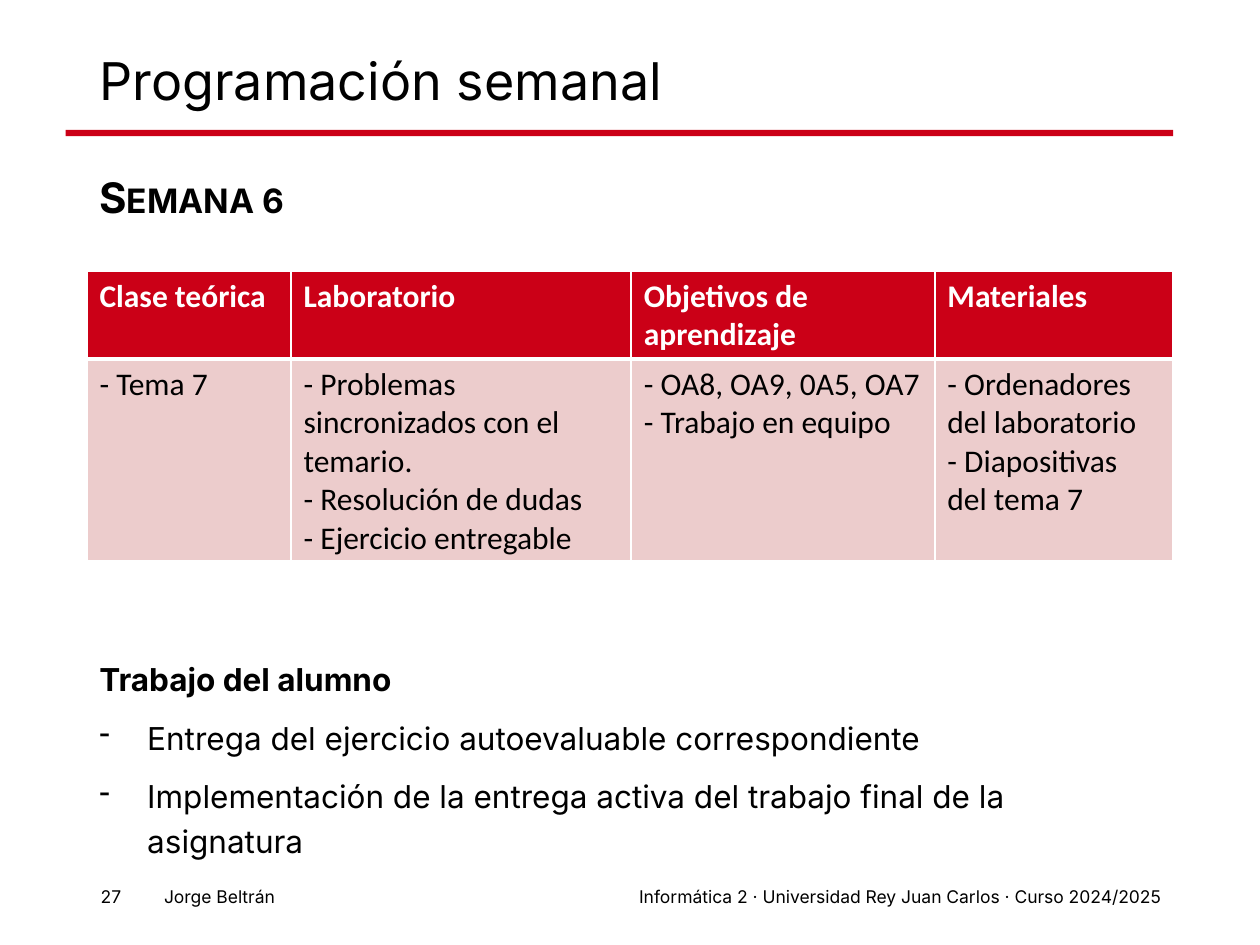
from dataclasses import dataclass

from lxml import etree
from pptx import Presentation
from pptx import util as u
from pptx.dml.color import RGBColor
from pptx.enum import shapes, text
from pptx.oxml.ns import qn

RED, PINK, BLACK, WHITE = "CB0017", "ECCCCC", "000000", "FFFFFF"
LEFT, WIDTH = 0.69, 8.62
FOOTER_TOP, FOOTER_HEIGHT = 6.98, 0.27


@dataclass
class Line:
    content: str
    bold: bool = False
    bullet: str = ""


@dataclass
class TextBox:
    left: float
    top: float
    width: float
    height: float
    lines: list[Line]
    size: float
    paragraph_format: dict
    anchor: text.MSO_ANCHOR = text.MSO_ANCHOR.TOP
    small_caps: bool = False


@dataclass
class Column:
    width: float
    heading: str
    items: list[str]


TITLE_FORMAT = {"line_spacing": 0.9}
BODY_FORMAT = {"line_spacing": 1.2, "space_before": u.Pt(7.5)}
FOOTER_FORMAT = {"alignment": text.PP_ALIGN.RIGHT}


def footer(left: float, width: float, content: str) -> TextBox:
    return TextBox(left, FOOTER_TOP, width, FOOTER_HEIGHT, [Line(content)], 10, FOOTER_FORMAT)


TEXT_BOXES = [
    footer(2.53, 6.78, "Informática 2 · Universidad Rey Juan Carlos · Curso 2024/2025"),
    footer(0.58, 0.48, "27"),
    footer(0.21, 2.07, "Jorge Beltrán"),
    TextBox(LEFT, 0.4, WIDTH, 0.52, [Line("Programación semanal")], 29.7,
            TITLE_FORMAT, anchor=text.MSO_ANCHOR.MIDDLE),
    TextBox(LEFT, 1.23, WIDTH, 0.68, [Line("Semana 6", bold=True)], 24,
            BODY_FORMAT, small_caps=True),
    TextBox(LEFT, 5.13, WIDTH, 1.7, [
        Line("Trabajo del alumno", bold=True),
        Line("Entrega del ejercicio autoevaluable correspondiente", bullet="-"),
        Line("Implementación de la entrega activa del trabajo final de la asignatura", bullet="-"),
    ], 18, BODY_FORMAT),
]

COLUMNS = [
    Column(1.62, "Clase teórica", ["- Tema 7"]),
    Column(2.7, "Laboratorio", ["- Problemas sincronizados con el temario.",
                                "- Resolución de dudas", "- Ejercicio entregable"]),
    Column(2.41, "Objetivos de aprendizaje", ["- OA8, OA9, 0A5, OA7", "- Trabajo en equipo"]),
    Column(1.89, "Materiales", ["- Ordenadores del laboratorio", "- Diapositivas del tema 7"]),
]
ROW_HEIGHTS = [0.7, 1.6]


def color(value: str) -> RGBColor:
    return RGBColor.from_string(value)


def apply_format(target, values: dict) -> None:
    for name, value in values.items():
        setattr(target, name, value)


def add_run(paragraph, content: str, font: str, size: float, hex_color: str, bold: bool):
    run = paragraph.add_run()
    run.text = content
    apply_format(run.font, {"name": font, "size": u.Pt(size), "bold": bold})
    run.font.color.rgb = color(hex_color)
    return run


def add_bullet(paragraph, character: str, indent: float) -> None:
    properties = paragraph._p.get_or_add_pPr()
    properties.set("marL", str(u.Inches(indent)))
    properties.set("indent", str(u.Inches(-indent)))
    etree.SubElement(properties, qn("a:buChar")).set("char", character)


def add_text_box(slide, box: TextBox) -> None:
    shape = slide.shapes.add_textbox(u.Inches(box.left), u.Inches(box.top),
                                     u.Inches(box.width), u.Inches(box.height))
    frame = shape.text_frame
    apply_format(frame, {"word_wrap": True, "vertical_anchor": box.anchor})
    for index, line in enumerate(box.lines):
        paragraph = frame.add_paragraph() if index else frame.paragraphs[0]
        apply_format(paragraph, box.paragraph_format)
        if line.bullet:
            add_bullet(paragraph, line.bullet, 0.38)
        run = add_run(paragraph, line.content, "Inter", box.size, BLACK, line.bold)
        if box.small_caps:
            run.font._element.set("cap", "small")


def add_borders(cell, widths: dict[str, float]) -> None:
    properties = cell._tc.get_or_add_tcPr()
    for side, width in widths.items():
        border = etree.SubElement(properties, qn(f"a:ln{side}"), w=str(u.Pt(width)))
        fill = etree.SubElement(border, qn("a:solidFill"))
        etree.SubElement(fill, qn("a:srgbClr"), val=WHITE)


def fill_cell(cell, lines: list[str], is_header: bool) -> None:
    separator = "B" if is_header else "T"
    add_borders(cell, {side: 3 if side == separator else 1 for side in "LRTB"})
    cell.fill.solid()
    cell.fill.fore_color.rgb = color(RED if is_header else PINK)
    for index, content in enumerate(lines):
        frame = cell.text_frame
        paragraph = frame.add_paragraph() if index else frame.paragraphs[0]
        add_run(paragraph, content, "Calibri", 18, WHITE if is_header else BLACK, is_header)


def add_schedule(slide, columns: list[Column]) -> None:
    table = slide.shapes.add_table(len(ROW_HEIGHTS), len(columns), u.Inches(LEFT), u.Inches(2.15),
                                   u.Inches(WIDTH), u.Inches(sum(ROW_HEIGHTS))).table
    table.horz_banding = False
    for row, height in zip(table.rows, ROW_HEIGHTS):
        row.height = u.Inches(height)
    for index, column in enumerate(columns):
        table.columns[index].width = u.Inches(column.width)
        fill_cell(table.cell(0, index), [column.heading], True)
        fill_cell(table.cell(1, index), column.items, False)


def add_title_rule(slide) -> None:
    shape = slide.shapes.add_shape(shapes.MSO_SHAPE.RECTANGLE, u.Inches(0.52), u.Inches(1.03),
                                   u.Inches(8.79), u.Inches(0.05))
    shape.shadow.inherit = False
    shape.fill.solid()
    shape.fill.fore_color.rgb = color(RED)
    shape.line.fill.background()


def main() -> None:
    presentation = Presentation()
    apply_format(presentation, {"slide_width": u.Inches(10), "slide_height": u.Inches(7.5)})
    slide = presentation.slides.add_slide(presentation.slide_layouts[6])

    # Red rule under the title
    add_title_rule(slide)

    # Footer, title, week and student work
    for box in TEXT_BOXES:
        add_text_box(slide, box)

    # Weekly schedule
    add_schedule(slide, COLUMNS)

    presentation.save("out.pptx")


if __name__ == "__main__":
    main()
